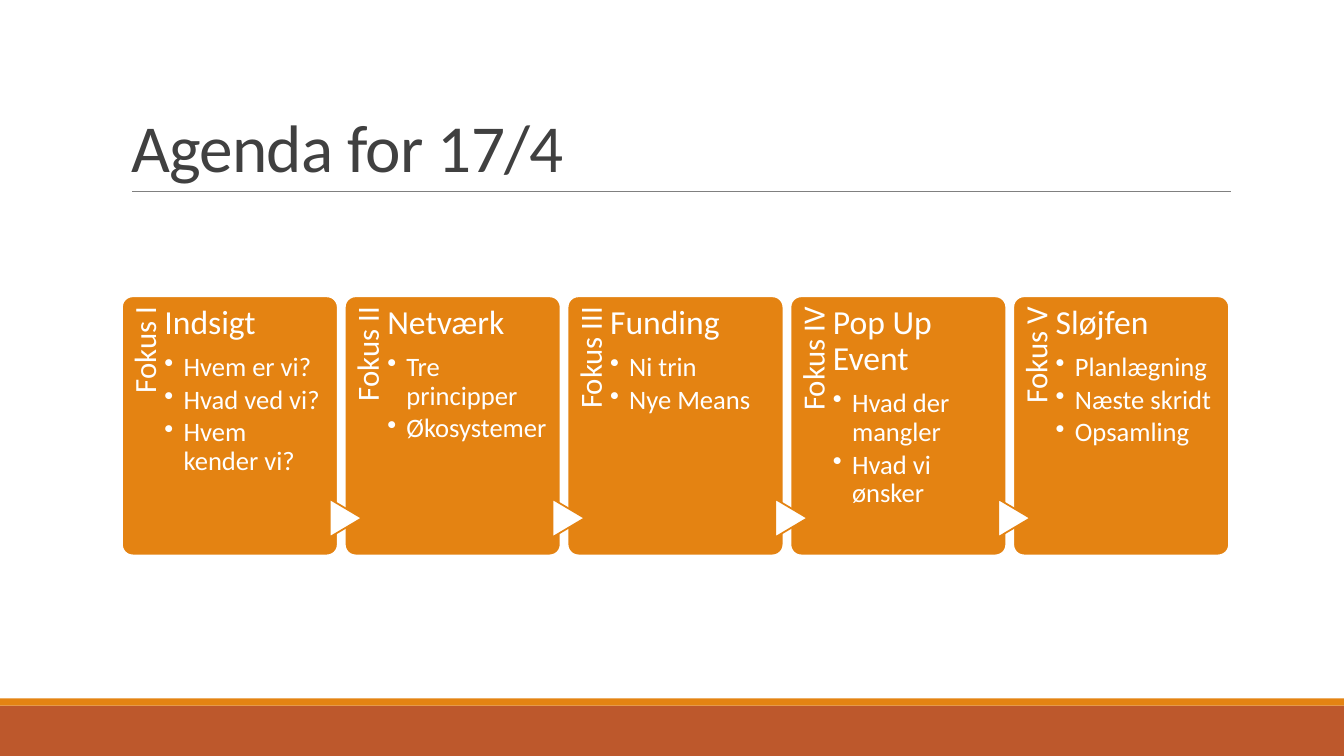
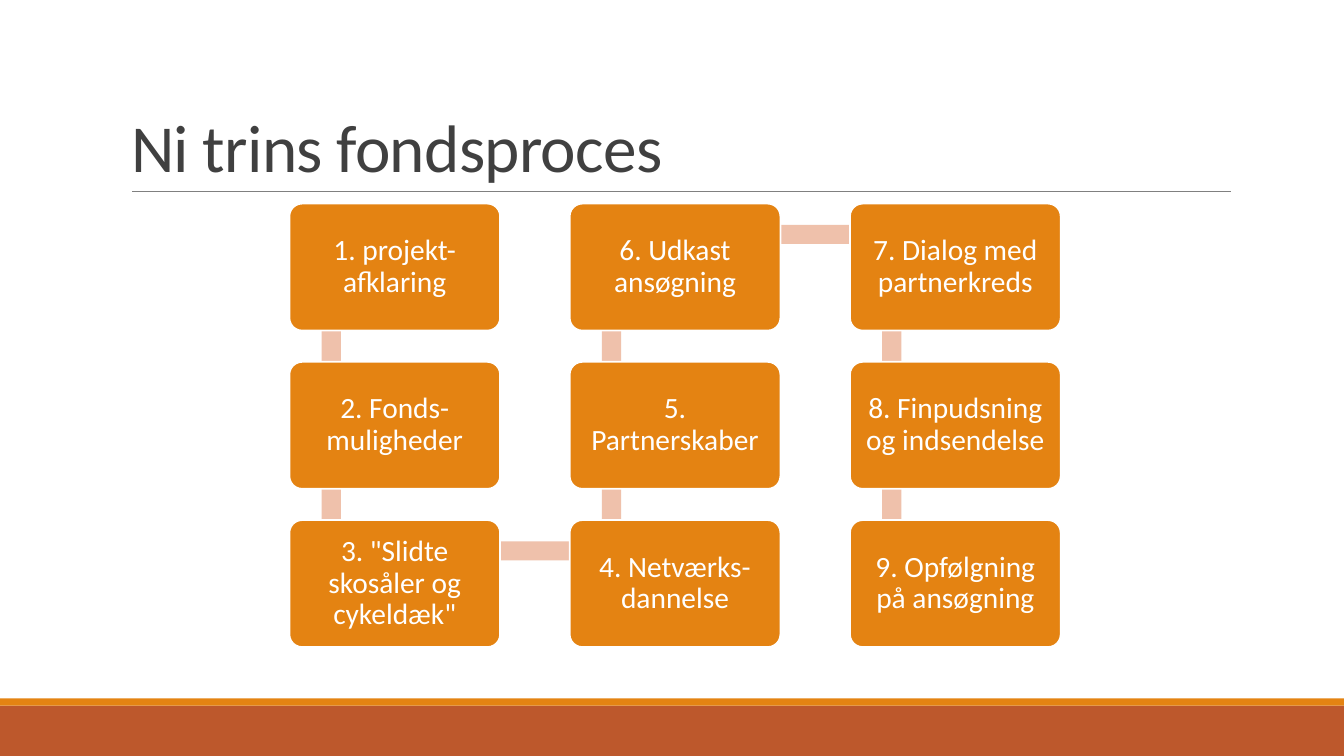
from pptx import Presentation
from pptx.dml.color import RGBColor
from pptx.enum.shapes import MSO_CONNECTOR, MSO_SHAPE
from pptx.enum.text import MSO_ANCHOR, MSO_AUTO_SIZE, PP_ALIGN
from pptx.oxml import parse_xml
from pptx.oxml.ns import nsdecls, qn
from pptx.util import Inches, Pt

ORANGE, RUST, PEACH = "E48312", "BD582C", "EFC1AB"
WHITE, DARK, GREY = "FFFFFF", "404040", "808080"
FONT = "Calibri"


def add_block(slide, kind, left, top, width, height, fill, outline=None):
    block = slide.shapes.add_shape(
        kind, Inches(left), Inches(top), Inches(width), Inches(height))
    block.shadow.inherit = False
    block.fill.solid()
    block.fill.fore_color.rgb = RGBColor.from_string(fill)
    if outline:
        block.line.color.rgb = RGBColor.from_string(outline)
        block.line.width = Pt(1.25)
    else:
        block.line.fill.background()
    return block


def write(frame, frame_format, paragraph_format, lines, color=WHITE):
    for name, value in {"word_wrap": True, **frame_format}.items():
        setattr(frame, name, value)
    for index, (text, size, space_after) in enumerate(lines):
        paragraph = frame.add_paragraph() if index else frame.paragraphs[0]
        spacing = {"space_after": Pt(space_after), **paragraph_format}
        for name, value in spacing.items():
            setattr(paragraph, name, value)
        run = paragraph.add_run()
        run.text = text
        for name, value in {"name": FONT, "size": Pt(size)}.items():
            setattr(run.font, name, value)
        run.font.color.rgb = RGBColor.from_string(color)


deck = Presentation()
deck.slide_width = Inches(13.33)
deck.slide_height = Inches(7.5)
layout = deck.slide_layouts.get_by_name("Title Only")

title_frame = {"vertical_anchor": MSO_ANCHOR.BOTTOM, "auto_size": MSO_AUTO_SIZE.NONE}
title_paragraph = {"alignment": PP_ALIGN.LEFT, "line_spacing": 0.85}
title_place = {"left": Inches(1.2), "top": Inches(0.31),
               "width": Inches(11), "height": Inches(1.59)}

slides = []
for heading in ("Agenda for 17/4", "Ni trins fondsproces"):
    slide = deck.slides.add_slide(layout)
    title = slide.shapes.title
    for name, value in title_place.items():
        setattr(title, name, value)
    write(title.text_frame, title_frame, title_paragraph, [(heading, 48, 0)], DARK)
    for properties in title.element.iter(qn("a:rPr")):
        properties.set("spc", "-50")
    slides.append(slide)
agenda, process = slides

layout_title, *unused = layout.placeholders
for placeholder in unused:
    placeholder.element.getparent().remove(placeholder.element)
footer_band = add_block(agenda, MSO_SHAPE.RECTANGLE, 0, 7, 13.33, 0.5, RUST)
footer_stripe = add_block(agenda, MSO_SHAPE.RECTANGLE, 0, 6.93, 13.33, 0.07, ORANGE)
title_rule = agenda.shapes.add_connector(
    MSO_CONNECTOR.STRAIGHT, Inches(1.31), Inches(1.9), Inches(12.21), Inches(1.9))
title_rule.line.color.rgb = RGBColor.from_string(GREY)
title_rule.line.width = Pt(0.5)
title_rule.element.spPr.append(parse_xml(f"<a:effectLst {nsdecls('a')}/>"))
for shared_part in (footer_band, footer_stripe, title_rule):
    layout_title.element.addprevious(shared_part.element)

focus_areas = [
    ("Fokus I", "Indsigt", ["Hvem er vi?", "Hvad ved vi?", "Hvem kender vi?"]),
    ("Fokus II", "Netværk", ["Tre principper", "Økosystemer"]),
    ("Fokus III", "Funding", ["Ni trin", "Nye Means"]),
    ("Fokus IV", "Pop Up Event", ["Hvad der mangler", "Hvad vi ønsker"]),
    ("Fokus V", "Sløjfen", ["Planlægning", "Næste skridt", "Opsamling"]),
]
card_frame = {"vertical_anchor": MSO_ANCHOR.TOP, "margin_left": Inches(0.39),
              "margin_top": Inches(0.06), "margin_right": Inches(0.1),
              "margin_bottom": 0}
label_frame = {"margin_left": 0, "margin_top": Inches(0.08),
               "margin_right": Inches(0.11), "margin_bottom": 0}
card_paragraph = {"alignment": PP_ALIGN.LEFT, "line_spacing": 0.9}
label_paragraph = {"alignment": PP_ALIGN.RIGHT, "line_spacing": 0.9}

for index, (focus, topic, points) in enumerate(focus_areas):
    left = 1.21 + index * 2.21
    card = add_block(agenda, MSO_SHAPE.ROUNDED_RECTANGLE,
                     left, 2.94, 2.14, 2.57, ORANGE, WHITE)
    card.adjustments[0] = 0.05
    lines = [(topic, 24, 8.4)] + [(point, 19, 2.85) for point in points]
    write(card.text_frame, card_frame, card_paragraph, lines)
    for properties in list(card.element.iter(qn("a:pPr")))[1:]:
        properties.set("marL", str(Inches(0.19)))
        properties.set("indent", str(-Inches(0.19)))
        properties.append(parse_xml(f'<a:buChar {nsdecls("a")} char="•"/>'))

    label = agenda.shapes.add_textbox(
        Inches(left - 0.84), Inches(3.77), Inches(2.1), Inches(0.43))
    label.rotation = 270
    write(label.text_frame, label_frame, label_paragraph, [(focus, 22, 0)])

    if index:
        arrow = add_block(agenda, MSO_SHAPE.FLOWCHART_EXTRACT,
                          left - 0.18, 4.98, 0.38, 0.32, WHITE, ORANGE)
        arrow.rotation = 90

steps = [
    "1. projekt-afklaring", "2. Fonds-muligheder",
    '3. "Slidte skosåler og cykeldæk"', "4. Netværks-dannelse",
    "5. Partnerskaber", "6. Udkast ansøgning", "7. Dialog med partnerkreds",
    "8. Finpudsning og indsendelse", "9. Opfølgning på ansøgning",
]
step_places = []
for index in range(len(steps)):
    column, row = divmod(index, 3)
    if column % 2:
        row = 2 - row
    step_places.append((2.87 + column * 2.78, 2.02 + row * 1.57))

bar_thickness = 0.19
for (left, top), (next_left, next_top) in zip(step_places, step_places[1:]):
    add_block(process, MSO_SHAPE.RECTANGLE,
              min(left, next_left) + 0.32, min(top, next_top) + 0.21,
              abs(next_left - left) + bar_thickness,
              abs(next_top - top) + bar_thickness, PEACH)

step_frame = {"vertical_anchor": MSO_ANCHOR.MIDDLE}
for side in ("left", "top", "right", "bottom"):
    step_frame[f"margin_{side}"] = Inches(0.09)
step_paragraph = {"alignment": PP_ALIGN.CENTER, "line_spacing": 0.9}
for step, (left, top) in zip(steps, step_places):
    step_box = add_block(process, MSO_SHAPE.ROUNDED_RECTANGLE,
                         left, top, 2.09, 1.26, ORANGE, WHITE)
    step_box.adjustments[0] = 0.1
    write(step_box.text_frame, step_frame, step_paragraph, [(step, 21, 0)])

deck.save("out.pptx")
